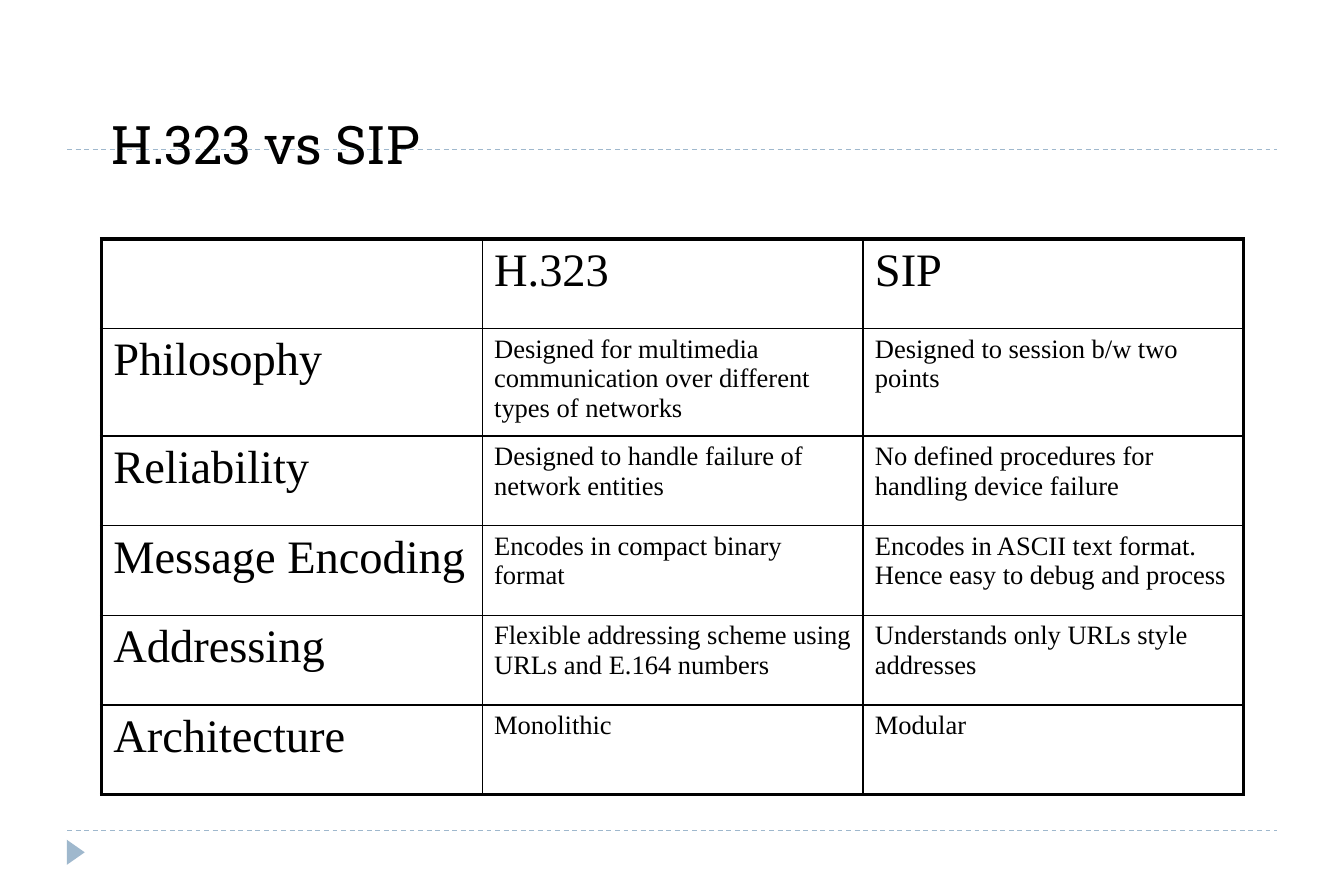
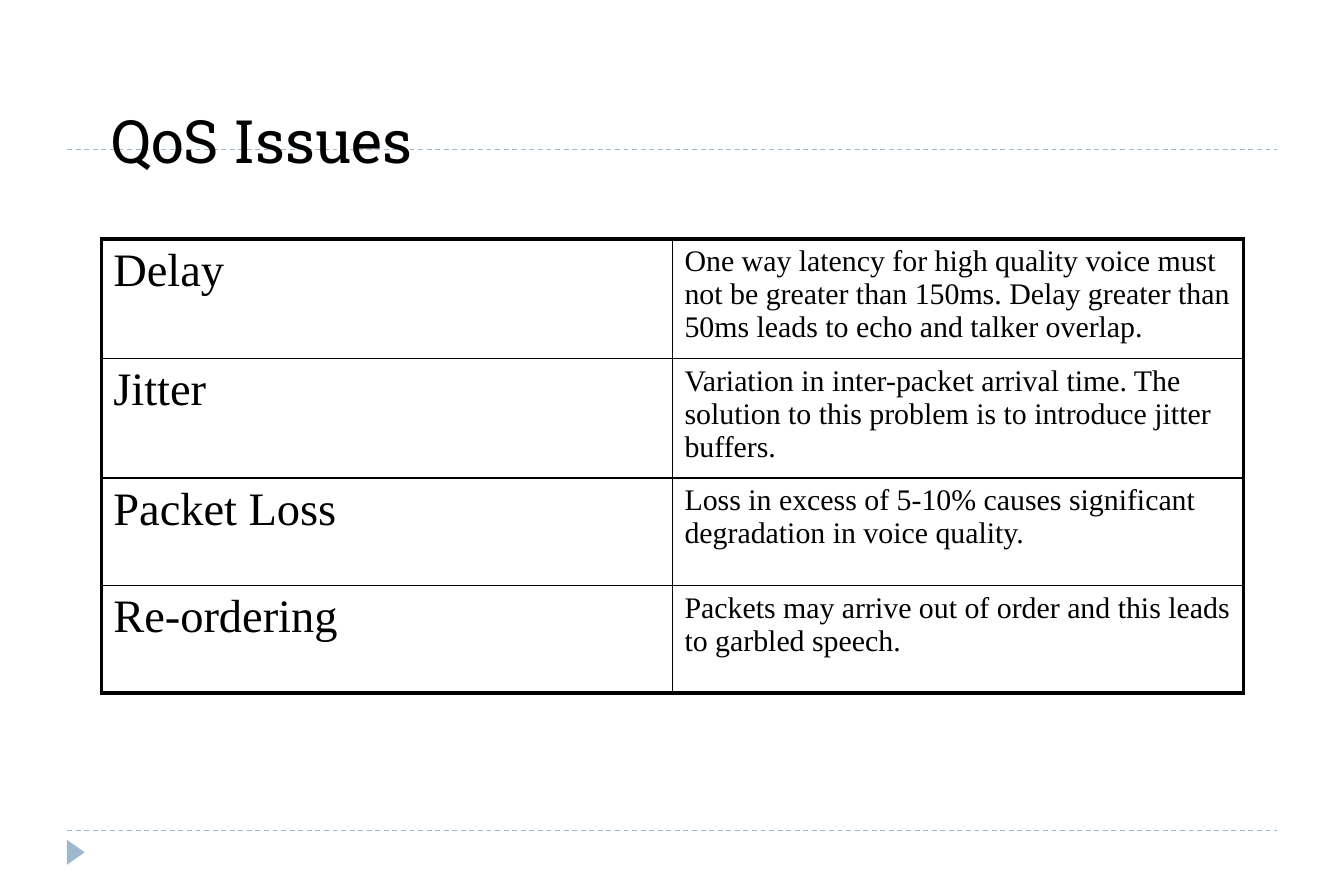
from dataclasses import dataclass

from lxml import etree
from pptx import Presentation
from pptx.dml.color import RGBColor
from pptx.enum.dml import MSO_LINE
from pptx.enum.shapes import MSO_CONNECTOR, MSO_SHAPE
from pptx.enum.text import MSO_ANCHOR
from pptx.oxml.ns import qn
from pptx.slide import Slide
from pptx.table import _Cell
from pptx.text.text import _Paragraph
from pptx.util import Emu, Inches, Pt

STRAIGHT = MSO_CONNECTOR.STRAIGHT
TRIANGLE = MSO_SHAPE.ISOSCELES_TRIANGLE
DASH = MSO_LINE.DASH
BOTTOM = MSO_ANCHOR.BOTTOM

SLIDE_WIDTH, SLIDE_HEIGHT = Inches(11.25), Inches(7.5)
INK, ACCENT = "000000", "9FB8CD"
TITLE_FONT, TABLE_FONT = "Roboto Slab", "Times New Roman"
LABEL_SIZE = 28
OUTER_BORDER, INNER_BORDER = 2.25, 1
CONTENT_WIDTH = 85  # percent of the slide's width
TABLE_LEFT, TABLE_TOP = 7.55, 26.67
RULE_HEIGHTS = (16.67, 92.67)


@dataclass(frozen=True)
class TableSlide:
    title: str
    title_size: int
    detail_size: int
    row_height: float  # percent of the slide's height
    rows: tuple[tuple[str, ...], ...]
    has_header: bool = False


TABLE_SLIDES = (
    TableSlide("H.323 vs SIP", 32, 16, 10, (
        ("", "H.323", "SIP"),
        ("Philosophy",
         "Designed for multimedia communication over different types of networks",
         "Designed to session b/w two points"),
        ("Reliability",
         "Designed to handle failure of network entities",
         "No defined procedures for handling device failure"),
        ("Message Encoding",
         "Encodes in compact binary format",
         "Encodes in ASCII text format. Hence easy to debug and process"),
        ("Addressing",
         "Flexible addressing scheme using URLs and E.164 numbers",
         "Understands only URLs style addresses"),
        ("Architecture", "Monolithic", "Modular"),
    ), has_header=True),
    TableSlide("QoS Issues", 36, 18, 12, (
        ("Delay",
         "One way latency for high quality voice must not be greater than 150ms. "
         "Delay greater than 50ms leads to echo and talker overlap."),
        ("Jitter",
         "Variation in inter-packet arrival time. The solution to this problem "
         "is to introduce jitter buffers."),
        ("Packet Loss",
         "Loss in excess of 5-10% causes significant degradation in voice quality."),
        ("Re-ordering",
         "Packets may arrive out of order and this leads to garbled speech."),
    )),
)


def across(percent: float) -> Emu:
    return Emu(round(SLIDE_WIDTH * percent / 100))


def down(percent: float) -> Emu:
    return Emu(round(SLIDE_HEIGHT * percent / 100))


def color(hex_value: str) -> RGBColor:
    return RGBColor.from_string(hex_value)


def write(paragraph: _Paragraph, text: str, font_name: str, size: int) -> None:
    paragraph.text = text
    paragraph.font.name = font_name
    paragraph.font.size = Pt(size)
    paragraph.font.color.rgb = color(INK)


def add_rule(slide: Slide, height: float) -> None:
    rule = slide.shapes.add_connector(
        STRAIGHT, across(5), down(height), across(95), down(height))
    rule.line.color.rgb = color(ACCENT)
    rule.line.width = Pt(0.75)
    rule.line.dash_style = DASH
    etree.SubElement(rule._element.spPr, qn("a:effectLst"))


def add_frame(slide: Slide) -> None:
    """Draw the dashed rules and the corner marker every slide shares."""
    for height in RULE_HEIGHTS:
        add_rule(slide, height)
    marker = slide.shapes.add_shape(
        TRIANGLE, across(4.7), down(94.13), across(1.87), down(2))
    marker.rotation = 90
    marker.shadow.inherit = False
    marker.fill.solid()
    marker.fill.fore_color.rgb = color(ACCENT)
    marker.line.fill.background()


def add_title(slide: Slide, text: str, size: int) -> None:
    box = slide.shapes.add_textbox(
        across(7.4), down(3.33), across(CONTENT_WIDTH), down(16.67))
    frame = box.text_frame
    frame.word_wrap = True
    frame.vertical_anchor = BOTTOM
    frame.margin_bottom = Inches(0.03)
    write(frame.paragraphs[0], text, TITLE_FONT, size)


def set_borders(cell: _Cell, outer_sides: dict[str, bool]) -> None:
    """Rule all four sides, with a heavier line on the table's outer edge."""
    properties = cell._tc.get_or_add_tcPr()
    for side, is_outer in outer_sides.items():
        width = Pt(OUTER_BORDER if is_outer else INNER_BORDER)
        border = etree.SubElement(properties, qn(f"a:ln{side}"), w=str(int(width)))
        fill = etree.SubElement(border, qn("a:solidFill"))
        etree.SubElement(fill, qn("a:srgbClr"), val=INK)


def add_comparison_table(slide: Slide, content: TableSlide) -> None:
    row_count, column_count = len(content.rows), len(content.rows[0])
    table = slide.shapes.add_table(
        row_count, column_count, across(TABLE_LEFT), down(TABLE_TOP),
        across(CONTENT_WIDTH), down(content.row_height * row_count)).table
    table.first_row = table.horz_banding = False
    for row, texts in enumerate(content.rows):
        for column, text in enumerate(texts):
            cell = table.cell(row, column)
            is_label = column == 0 or (content.has_header and row == 0)
            size = LABEL_SIZE if is_label else content.detail_size
            write(cell.text_frame.paragraphs[0], text, TABLE_FONT, size)
            set_borders(cell, {
                "L": column == 0,
                "R": column == column_count - 1,
                "T": row == 0,
                "B": row == row_count - 1,
            })
            cell.fill.background()


def main() -> None:
    presentation = Presentation()
    presentation.slide_width = SLIDE_WIDTH
    presentation.slide_height = SLIDE_HEIGHT
    blank_layout = presentation.slide_layouts[6]
    for content in TABLE_SLIDES:
        slide = presentation.slides.add_slide(blank_layout)
        add_frame(slide)
        add_title(slide, content.title, content.title_size)
        add_comparison_table(slide, content)
    presentation.save("out.pptx")


if __name__ == "__main__":
    main()
